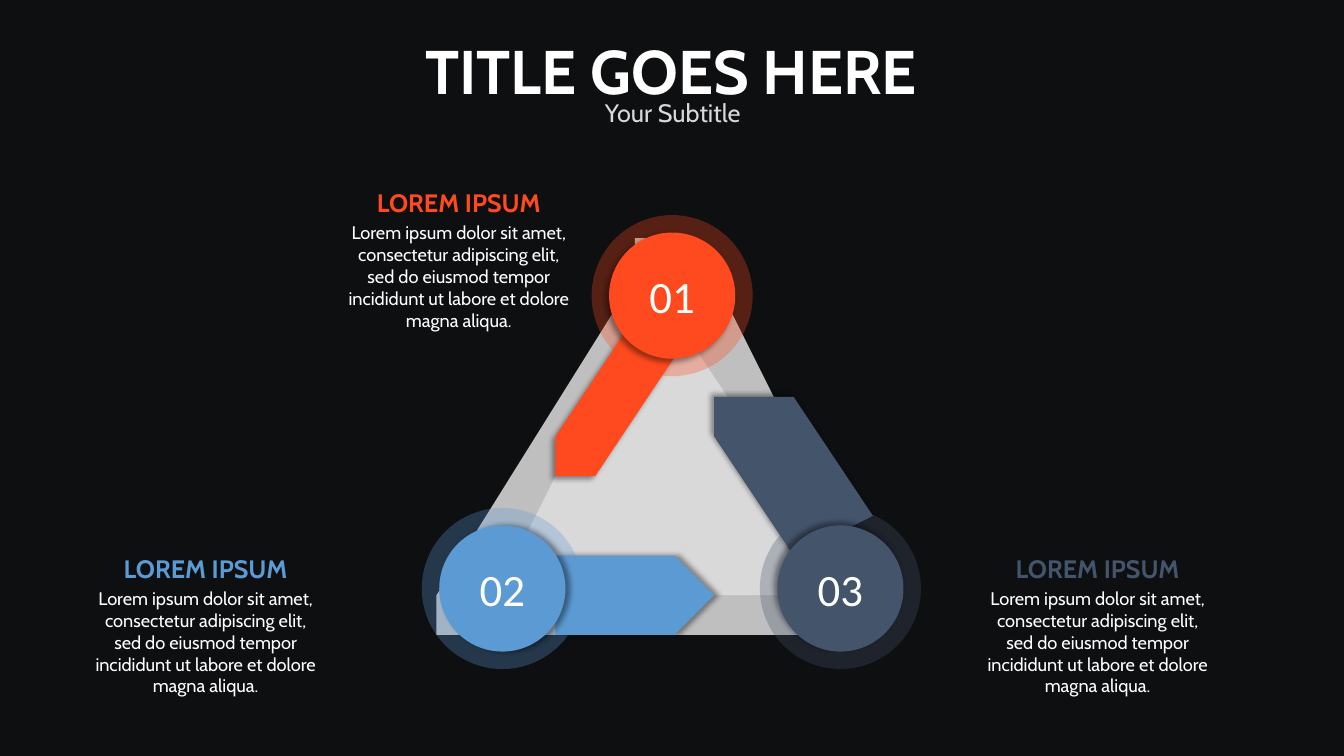
"""Build a dark slide with a three-step triangular cycle."""
from lxml import etree
from pptx import Presentation
from pptx.dml.color import RGBColor
from pptx.enum.shapes import MSO_SHAPE as Shape
from pptx.enum.text import MSO_ANCHOR as Anchor, PP_ALIGN as Align
from pptx.oxml.ns import qn
from pptx.util import Cm, Pt

COLORS = {
    "background": "0E0F11", "white": "FFFFFF", "subtitle": "D9D9D9",
    "outer": "BFBFBF", "inner": "D9D9D9",
    "orange": "FE4A1E", "blue": "5C9AD3", "slate": "44546B",
}
BODY = ("Lorem ipsum dolor sit amet, consectetur adipiscing elit, sed do "
        "eiusmod tempor incididunt ut labore et dolore magna aliqua.")


def paint(shape, color, shadow_angle=None):
    """Fill a shape without an outline and optionally cast a shadow."""
    shape.shadow.inherit = False
    shape.fill.solid()
    shape.fill.fore_color.rgb = RGBColor.from_string(COLORS[color])
    shape.line.fill.background()
    if shadow_angle is not None:
        effects = shape.element.spPr.find(qn("a:effectLst"))
        shadow = etree.SubElement(
            effects, qn("a:outerShdw"), blurRad=str(Pt(4)), dist=str(Pt(3)),
            dir=str(shadow_angle * 60000), algn="ctr", rotWithShape="0")
        tint = etree.SubElement(shadow, qn("a:srgbClr"), val="000000")
        etree.SubElement(tint, qn("a:alpha"), val="40000")


def write(paragraph, text, size, color, font="Cabin", bold=False):
    """Add one centred run to a paragraph."""
    paragraph.alignment = Align.CENTER
    run = paragraph.add_run()
    run.text = text
    run.font.name = font
    run.font.size = Pt(size)
    run.font.bold = bold
    run.font.color.rgb = RGBColor.from_string(COLORS[color])


presentation = Presentation()
presentation.slide_width = Cm(33.87)
presentation.slide_height = Cm(19.05)
slide = presentation.slides.add_slide(presentation.slide_layouts[6])
slide.background.fill.solid()
slide.background.fill.fore_color.rgb = RGBColor.from_string(COLORS["background"])

corners = [
    [(12.14, 15.77), (11.38, 15.77), (11.05, 15.24), (11.46, 14.61)],
    [(16.1, 6.76), (16.48, 6.12), (17.12, 6.12), (17.5, 6.76)],
    [(22.17, 14.61), (22.56, 15.24), (22.25, 15.77), (21.46, 15.77)],
]
curve_steps = 12
outline = []
for start, first, second, end in corners:
    for step in range(curve_steps + 1):
        t = step / curve_steps
        weights = ((1 - t) ** 3, 3 * t * (1 - t) ** 2, 3 * t ** 2 * (1 - t), t ** 3)
        points = (start, first, second, end)
        outline.append(tuple(
            sum(weight * point[axis] for weight, point in zip(weights, points))
            for axis in (0, 1)))

center_x, outer_top = 16.8, 6.12
for color, scale, top in [("outer", 1, 6.12), ("inner", 0.7, 8)]:
    triangle = [(center_x + scale * (x - center_x), top + scale * (y - outer_top))
                for x, y in outline]
    builder = slide.shapes.build_freeform(*triangle[0], scale=Cm(1))
    builder.add_line_segments(triangle[1:])
    paint(builder.convert_to_shape(), color)

steps = [
    ("03", "slate", 225, (21.18, 14.83), (24.61, 13.82),
     [(21.54, 13.36), (19.58, 10.21), (18.21, 9.96), (17.86, 11.3), (19.81, 14.45)]),
    ("01", "orange", 135, (16.94, 7.45), (8.51, 4.6),
     [(17.25, 8.92), (15.24, 12.04), (13.89, 12.29), (13.54, 10.95), (15.52, 7.82)]),
    ("02", "blue", 0, (12.66, 14.83), (2.13, 13.82),
     [(13.69, 15.88), (17.4, 15.88), (18.34, 14.83), (17.4, 13.82), (13.69, 13.82)]),
]
for number, color, angle, center, corner, arrow in steps:
    builder = slide.shapes.build_freeform(*arrow[0], scale=Cm(1))
    builder.add_line_segments(arrow[1:])
    paint(builder.convert_to_shape(), color, angle)

for number, color, angle, (x, y), (left, top), arrow in steps:
    halo, circle = [
        slide.shapes.add_shape(Shape.OVAL, Cm(x - size / 2), Cm(y - size / 2),
                               Cm(size), Cm(size))
        for size in (4.06, 3.18)]
    paint(halo, color)
    tint = halo.element.spPr.find(qn("a:solidFill")).find(qn("a:srgbClr"))
    etree.SubElement(tint, qn("a:alpha"), val="30000")
    paint(circle, color, angle)
    frame = circle.text_frame
    frame.vertical_anchor = Anchor.MIDDLE
    frame.margin_left = frame.margin_right = Cm(0.33)
    frame.margin_top = frame.margin_bottom = Cm(0.18)
    write(frame.paragraphs[0], number, 32, "white", "Calibri")

    frame = slide.shapes.add_textbox(Cm(left), Cm(top), Cm(6.1), Cm(3.91)).text_frame
    frame.word_wrap = True
    frame.margin_left = frame.margin_right = Cm(0.2)
    write(frame.paragraphs[0], "LOREM IPSUM", 18, color, bold=True)
    paragraph = frame.add_paragraph()
    paragraph.space_before = Pt(2.6)
    write(paragraph, BODY, 13, "white")

headings = [
    ("TITLE GOES HERE", 44, "white", True, (9.27, 0.71, 15.29, 2.13)),
    ("Your Subtitle", 18, "subtitle", False, (11.2, 2.34, 11.51, 1.02)),
]
for text, size, color, bold, box in headings:
    frame = slide.shapes.add_textbox(*map(Cm, box)).text_frame
    frame.word_wrap = True
    write(frame.paragraphs[0], text, size, color, bold=bold)

presentation.save("out.pptx")
